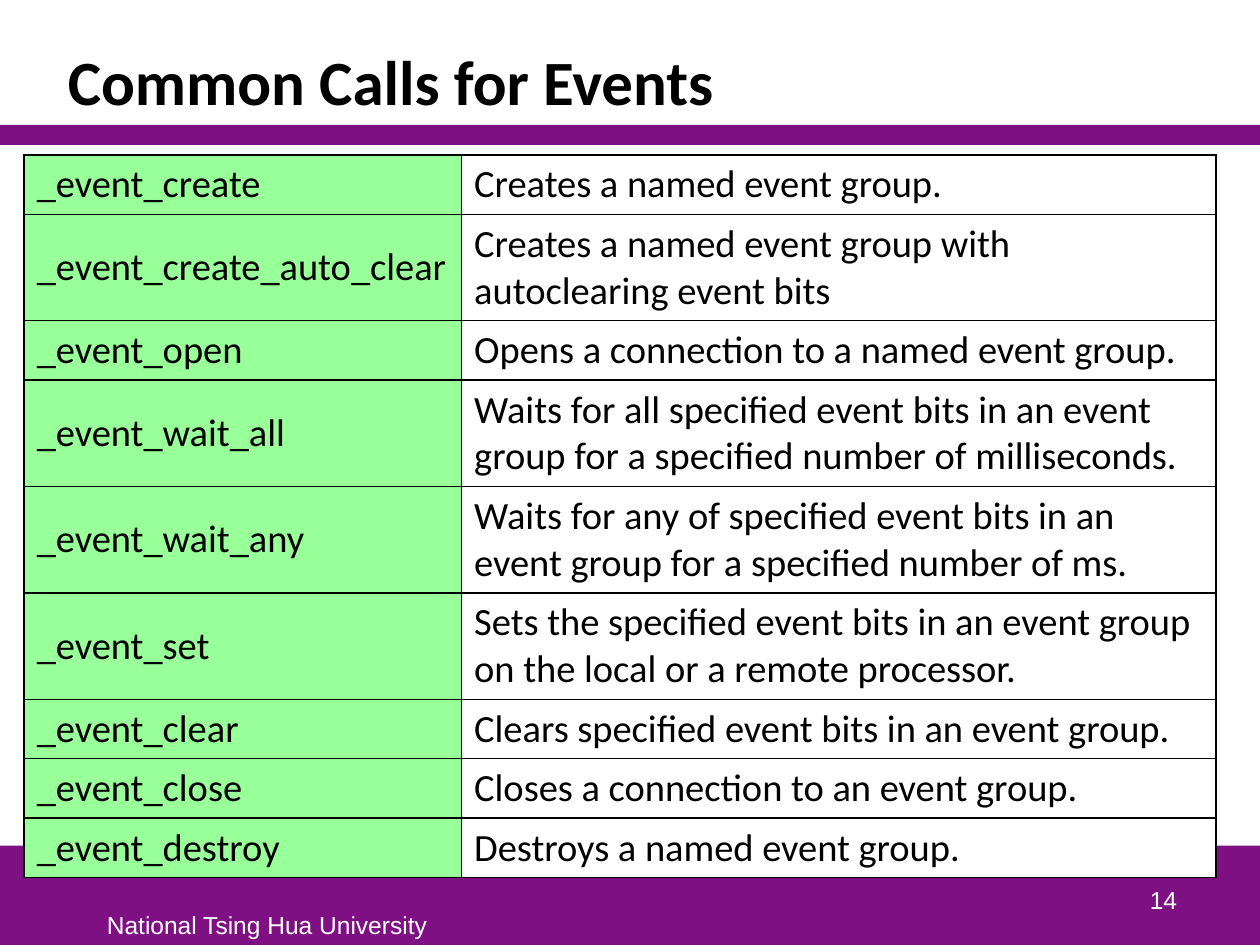
from lxml import etree
from pptx import Presentation
from pptx.dml.color import RGBColor
from pptx.enum.shapes import MSO_SHAPE
from pptx.enum.text import MSO_ANCHOR, PP_ALIGN
from pptx.oxml.ns import qn
from pptx.util import Pt

RECTANGLE = MSO_SHAPE.RECTANGLE
TOP, MIDDLE, BOTTOM = MSO_ANCHOR.TOP, MSO_ANCHOR.MIDDLE, MSO_ANCHOR.BOTTOM
LEFT, RIGHT = PP_ALIGN.LEFT, PP_ALIGN.RIGHT

PURPLE = RGBColor(0x7F, 0x10, 0x84)
GREEN = RGBColor(0x99, 0xFF, 0x99)
WHITE = RGBColor(0xFF, 0xFF, 0xFF)
BLACK = RGBColor(0x00, 0x00, 0x00)

SLIDE_WIDTH, SLIDE_HEIGHT = Pt(720), Pt(540)
COLUMN_WIDTHS = (Pt(250), Pt(431))
ONE_LINE_ROW, TWO_LINE_ROW = Pt(34), Pt(60.8)
ONE_LINE_LENGTH = 46

EVENT_CALLS = (
    ("_event_create", "Creates a named event group."),
    ("_event_create_auto_clear", "Creates a named event group with autoclearing event bits"),
    ("_event_open", "Opens a connection to a named event group."),
    ("_event_wait_all", "Waits for all specified event bits in an event group "
                        "for a specified number of milliseconds."),
    ("_event_wait_any", "Waits for any of specified event bits in an event group "
                        "for a specified number of ms."),
    ("_event_set", "Sets the specified event bits in an event group "
                   "on the local or a remote processor."),
    ("_event_clear", "Clears specified event bits in an event group."),
    ("_event_close", "Closes a connection to an event group."),
    ("_event_destroy", "Destroys a named event group."),
)


def format_text(paragraph, font_name, size, color, bold=False):
    """Set the font of every run in a paragraph."""
    for run in paragraph.runs:
        run.font.name = font_name
        run.font.size = Pt(size)
        run.font.bold = bold
        run.font.color.rgb = color


def add_band(slide, top, height):
    """Add a purple band across the full slide width."""
    band = slide.shapes.add_shape(RECTANGLE, 0, top, SLIDE_WIDTH, height)
    band.shadow.inherit = False
    band.fill.solid()
    band.fill.fore_color.rgb = PURPLE
    band.line.fill.background()


def add_label(slide, text, left, top, width, height, anchor, align=LEFT, wrap=True):
    """Add a text box and return its paragraph for formatting."""
    label = slide.shapes.add_textbox(left, top, width, height)
    frame = label.text_frame
    frame.word_wrap = wrap
    frame.vertical_anchor = anchor
    frame.text = text
    paragraph = frame.paragraphs[0]
    paragraph.alignment = align
    return paragraph


def set_borders(cell, color):
    """Draw a one-point line on all four sides of a cell."""
    properties = cell._tc.get_or_add_tcPr()
    for position, side in enumerate(("a:lnL", "a:lnR", "a:lnT", "a:lnB")):
        line = etree.Element(qn(side), w=str(Pt(1)))
        fill = etree.SubElement(line, qn("a:solidFill"))
        etree.SubElement(fill, qn("a:srgbClr"), val=str(color))
        properties.insert(position, line)


def fill_cell(cell, text, color):
    """Write a table cell and give it its fill and borders."""
    cell.text_frame.text = text
    format_text(cell.text_frame.paragraphs[0], "Calibri", 22, BLACK)
    cell.vertical_anchor = MIDDLE
    cell.fill.solid()
    cell.fill.fore_color.rgb = color
    set_borders(cell, BLACK)


def add_call_table(slide, left, top):
    """Add the table of event calls and their descriptions."""
    heights = [ONE_LINE_ROW if len(description) <= ONE_LINE_LENGTH else TWO_LINE_ROW
               for _, description in EVENT_CALLS]
    table = slide.shapes.add_table(len(EVENT_CALLS), len(COLUMN_WIDTHS), left, top,
                                   sum(COLUMN_WIDTHS), sum(heights)).table
    table.first_row = False
    table.horz_banding = False
    for column, width in zip(table.columns, COLUMN_WIDTHS):
        column.width = width
    for row, height, texts in zip(table.rows, heights, EVENT_CALLS):
        row.height = height
        for cell, text, color in zip(row.cells, texts, (GREEN, WHITE)):
            fill_cell(cell, text, color)


def main():
    """Build the slide and save it."""
    presentation = Presentation()
    presentation.slide_width, presentation.slide_height = SLIDE_WIDTH, SLIDE_HEIGHT
    slide = presentation.slides.add_slide(presentation.slide_layouts[6])

    add_band(slide, Pt(483.3), Pt(56.7))
    add_band(slide, Pt(71.4), Pt(11.4))

    university = add_label(slide, "National Tsing Hua University",
                           Pt(54), Pt(516.3), Pt(198.7), Pt(24), TOP, wrap=False)
    format_text(university, "Arial", 14, WHITE)

    title = add_label(slide, "Common Calls for Events",
                      Pt(31.7), Pt(18), Pt(645.8), Pt(53.3), BOTTOM)
    title.line_spacing = 0.85
    format_text(title, "Calibri", 36, BLACK, bold=True)

    page_number = add_label(slide, "14", Pt(530), Pt(490.3), Pt(149.7), Pt(36),
                            BOTTOM, align=RIGHT)
    format_text(page_number, "Arial", 14, WHITE)

    add_call_table(slide, Pt(13.8), Pt(88.5))
    presentation.save("out.pptx")


if __name__ == "__main__":
    main()
